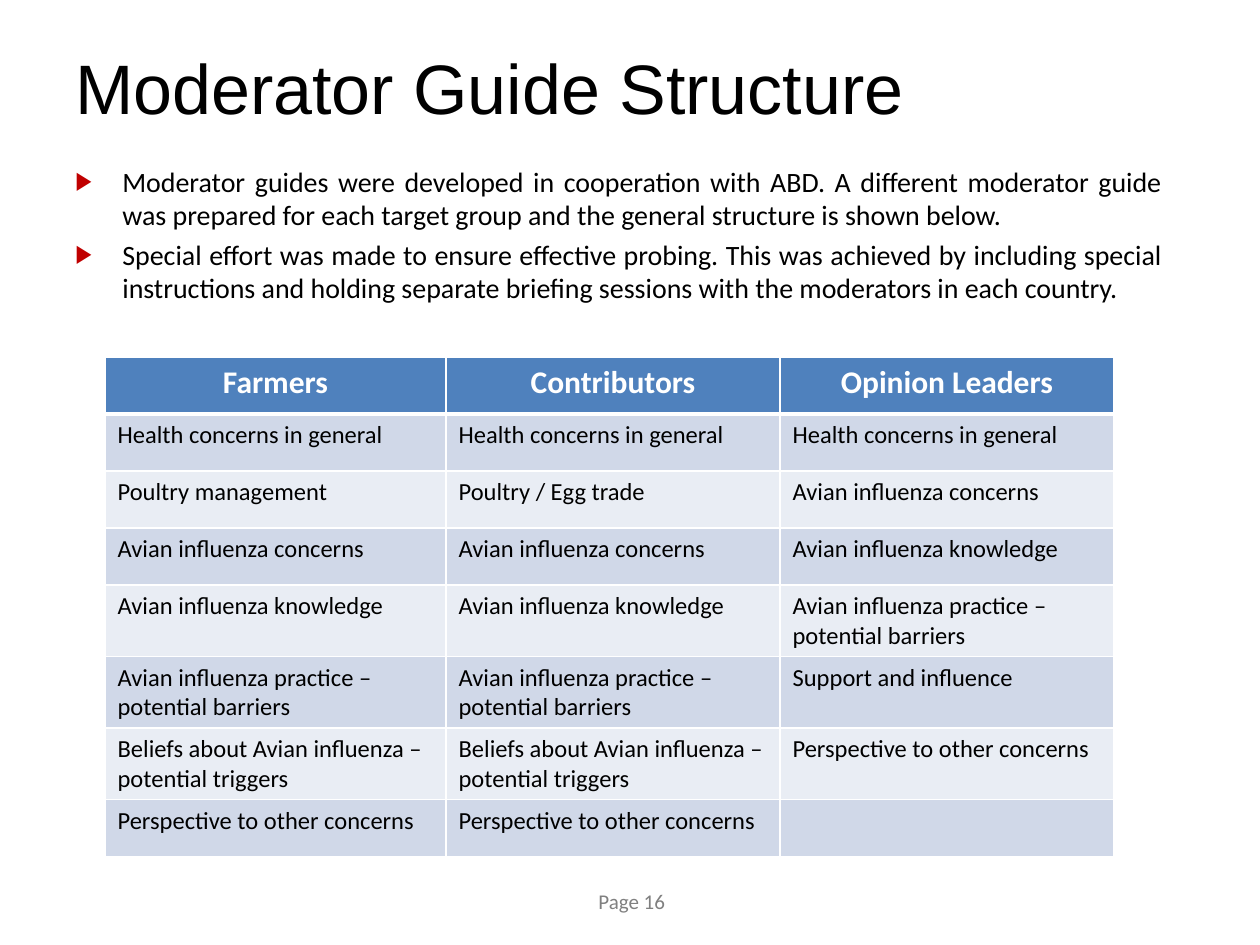
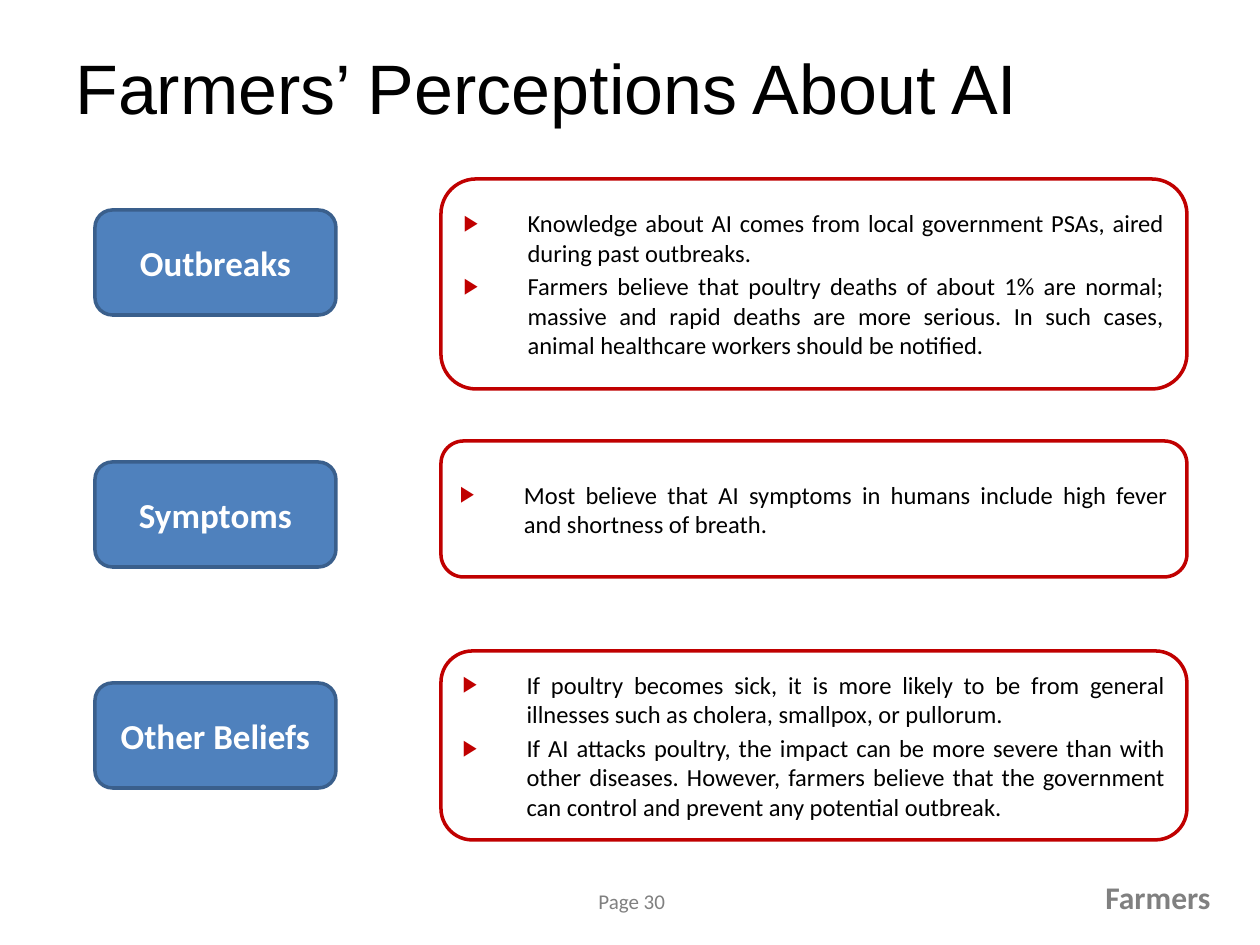
from lxml import etree
from pptx import Presentation, util as u
from pptx.dml.color import RGBColor
from pptx.enum import shapes, text
from pptx.oxml import ns

PX = 914400 / 126
BLUE, BLUE_EDGE, RED = "4F81BD", "3A5F8C", "C00000"
BLACK, WHITE, GREY = "000000", "FFFFFF", "808080"
BANDS = "D0D8E8", "E9EDF4"
LEFT, CENTER, RIGHT, JUSTIFY = (
    text.PP_ALIGN.LEFT, text.PP_ALIGN.CENTER, text.PP_ALIGN.RIGHT, text.PP_ALIGN.JUSTIFY)
TOP, MIDDLE = text.MSO_ANCHOR.TOP, text.MSO_ANCHOR.MIDDLE

GUIDE_POINTS = [
    "Moderator guides were developed in cooperation with ABD. A different moderator guide "
    "was prepared for each target group and the general structure is shown below.",
    "Special effort was made to ensure effective probing. This was achieved by including special "
    "instructions and holding separate briefing sessions with the moderators in each country.",
]
HEALTH, CONCERNS = "Health concerns in general", "Avian influenza concerns"
KNOWLEDGE = "Avian influenza knowledge"
PRACTICE = "Avian influenza practice – potential barriers"
BELIEFS = "Beliefs about Avian influenza – potential triggers"
PERSPECTIVE = "Perspective to other concerns"
GUIDE_ROWS = [
    ("Farmers", "Contributors", "Opinion Leaders"),
    (HEALTH, HEALTH, HEALTH),
    ("Poultry management", "Poultry / Egg trade", CONCERNS),
    (CONCERNS, CONCERNS, KNOWLEDGE),
    (KNOWLEDGE, KNOWLEDGE, PRACTICE),
    (PRACTICE, PRACTICE, "Support and influence"),
    (BELIEFS, BELIEFS, PERSPECTIVE),
    (PERSPECTIVE, PERSPECTIVE, ""),
]
PERCEPTIONS = [
    ("Outbreaks", 210, 179, 210, 6, [
        "Knowledge about AI comes from local government PSAs, aired during past outbreaks.",
        "Farmers believe that poultry deaths of about 1% are normal; massive and rapid deaths "
        "are more serious. In such cases, animal healthcare workers should be notified."]),
    ("Symptoms", 462, 441, 136, 6, [
        "Most believe that AI symptoms in humans include high fever and shortness of breath."]),
    ("Other Beliefs", 683, 651, 189, 0, [
        "If poultry becomes sick, it is more likely to be from general illnesses such as "
        "cholera, smallpox, or pullorum.",
        "If AI attacks poultry, the impact can be more severe than with other diseases. However, "
        "farmers believe that the government can control and prevent any potential outbreak."]),
]


def px(n):
    """Turn pixels into EMU."""
    return u.Emu(round(n * PX))


def rgb(value):
    """Turn a hex string into a colour."""
    return RGBColor.from_string(value)


def write(tf, lines, size=14, font="Calibri", color=BLACK, bold=False, align=LEFT,
          anchor=TOP, wrap=True, indent=0, before=0, after=0):
    """Fill a text frame with one paragraph a line, bulleted when indented."""
    tf.word_wrap, tf.vertical_anchor = wrap, anchor
    for i, line in enumerate(lines):
        p = tf.add_paragraph() if i else tf.paragraphs[0]
        p.alignment = align
        p.space_before, p.space_after = u.Pt(before), u.Pt(after)
        if indent:
            add_bullet(p, indent)
        r = p.add_run()
        r.text = line
        r.font.size, r.font.name, r.font.bold = u.Pt(size), font, bold
        r.font.color.rgb = rgb(color)


def add_bullet(p, indent):
    """Give a paragraph a red triangle bullet with a hanging indent."""
    pr = p._p.get_or_add_pPr()
    pr.set("marL", str(px(indent)))
    pr.set("indent", str(-px(indent)))
    clr = etree.SubElement(pr, ns.qn("a:buClr"))
    etree.SubElement(clr, ns.qn("a:srgbClr"), val=RED)
    etree.SubElement(pr, ns.qn("a:buSzPct"), val="90000")
    etree.SubElement(pr, ns.qn("a:buFont"), typeface="Arial")
    etree.SubElement(pr, ns.qn("a:buChar"), char="▶")


def add_text(s, box, lines, **fmt):
    """Add a text box."""
    sp = s.shapes.add_textbox(*map(px, box))
    write(sp.text_frame, lines, **fmt)


def add_round_box(s, box, lines, fill, line, inset=6, **fmt):
    """Add a rounded rectangle with centred-height text."""
    sp = s.shapes.add_shape(shapes.MSO_SHAPE.ROUNDED_RECTANGLE, *map(px, box))
    sp.shadow.inherit = False
    if fill:
        sp.fill.solid()
        sp.fill.fore_color.rgb = rgb(fill)
    else:
        sp.fill.background()
    sp.line.color.rgb, sp.line.width = rgb(line), u.Pt(2)
    tf = sp.text_frame
    tf.margin_top = tf.margin_bottom = px(inset)
    write(tf, lines, anchor=MIDDLE, **fmt)


def set_borders(cell, bottom):
    """Draw white cell borders, with the given width at the bottom."""
    pr = cell._tc.get_or_add_tcPr()
    for i, (side, width) in enumerate(zip("LRTB", (1, 1, 1, bottom))):
        ln = etree.Element(ns.qn(f"a:ln{side}"), w=str(u.Pt(width)))
        fill = etree.SubElement(ln, ns.qn("a:solidFill"))
        etree.SubElement(fill, ns.qn("a:srgbClr"), val=WHITE)
        pr.insert(i, ln)


def add_guide_table(s, left, top, widths, row_height, rows):
    """Add a table with a blue header and banded rows."""
    frame = s.shapes.add_table(len(rows), len(widths), px(left), px(top),
                               px(sum(widths)), px(row_height * len(rows)))
    table = frame.table
    for column, width in zip(table.columns, widths):
        column.width = px(width)
    for i, row in enumerate(rows):
        table.rows[i].height = px(row_height)
        for j, value in enumerate(row):
            cell = table.cell(i, j)
            cell.fill.solid()
            cell.fill.fore_color.rgb = rgb(BANDS[(i - 1) % 2] if i else BLUE)
            set_borders(cell, 1 if i else 3)
            if i == 0:
                write(cell.text_frame, [value], size=18, color=WHITE, bold=True, align=CENTER)
            elif value:
                write(cell.text_frame, [value])


def add_slide(prs, title, page):
    """Add a slide with its title and page number."""
    s = prs.slides.add_slide(prs.slide_layouts[6])
    add_text(s, (586, 882, 97, 38), [f"Page {page}"], size=12, color=GREY, wrap=False)
    add_text(s, (63, 38, 1134, 98), [title], size=40, font="Arial", anchor=MIDDLE)
    return s


def main():
    """Build both slides and save them."""
    prs = Presentation()
    prs.slide_width, prs.slide_height = px(1260), px(945)

    s = add_slide(prs, "Moderator Guide Structure", 16)
    add_guide_table(s, 105, 357, (341, 334, 334), 57, GUIDE_ROWS)
    add_text(s, (63, 158, 1112, 179), GUIDE_POINTS, size=16, align=JUSTIFY, indent=47, after=3.5)

    s = add_slide(prs, "Farmers’ Perceptions About AI", 30)
    add_text(s, (1092, 872, 131, 50), ["Farmers"], size=18, color=GREY, bold=True,
             align=RIGHT, wrap=False)
    for topic, topic_top, top, height, inset, points in PERCEPTIONS:
        add_round_box(s, (95, topic_top, 241, 105), [topic], BLUE, BLUE_EDGE,
                      size=20, color=WHITE, bold=True, align=CENTER)
        add_round_box(s, (441, top, 746, height), points, None, RED, inset,
                      align=JUSTIFY, indent=64, before=2.5)

    prs.save("out.pptx")


if __name__ == "__main__":
    main()
